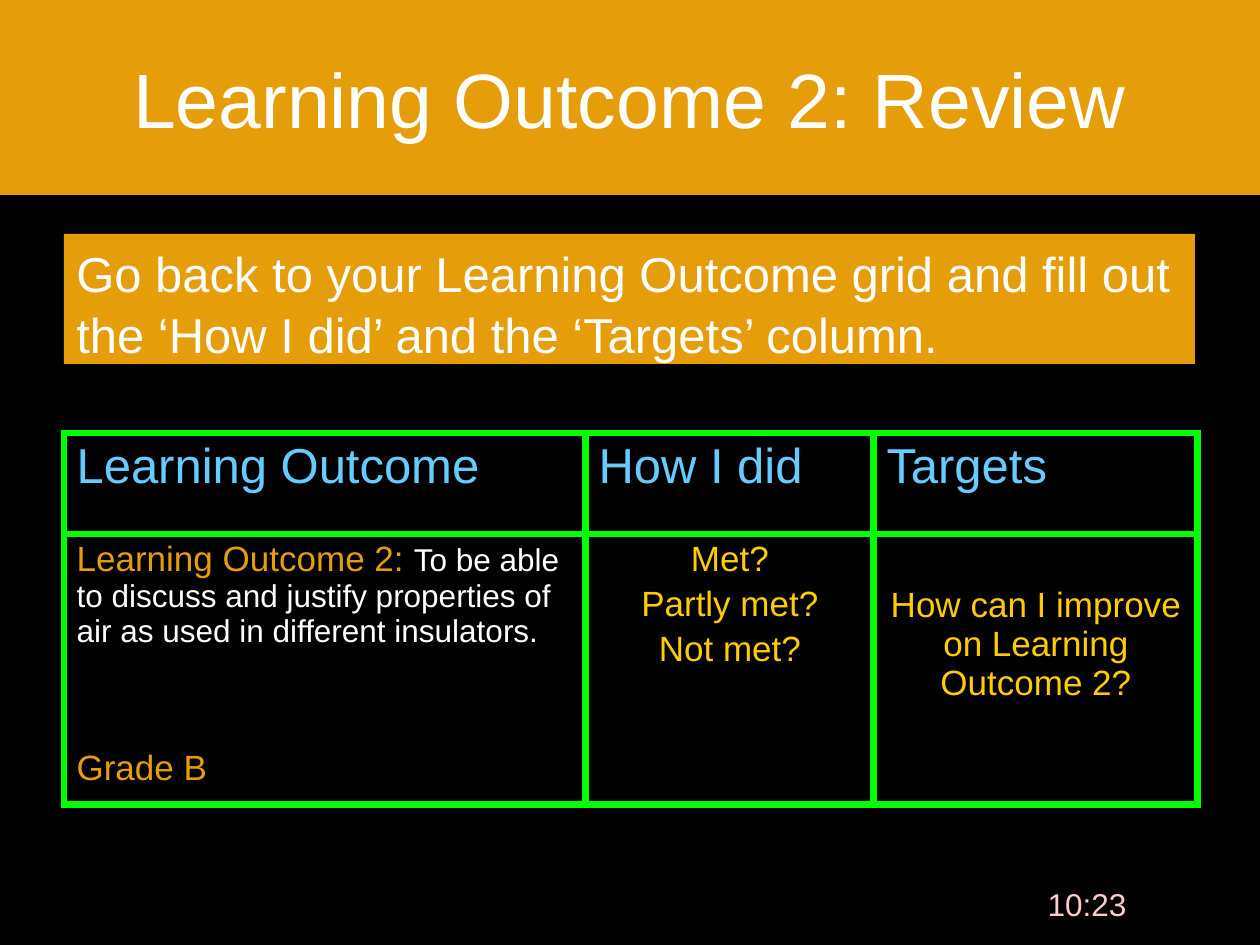
from dataclasses import dataclass

from lxml import etree
from pptx import Presentation
from pptx.dml.color import RGBColor
from pptx.enum.shapes import MSO_SHAPE
from pptx.enum.text import MSO_ANCHOR, PP_ALIGN
from pptx.oxml.ns import qn
from pptx.util import Pt

LEFT, MID = PP_ALIGN.LEFT, PP_ALIGN.CENTER
TOP, CENTRE = MSO_ANCHOR.TOP, MSO_ANCHOR.MIDDLE
RECT = MSO_SHAPE.RECTANGLE
SCALE = 914400 // 126


@dataclass(frozen=True)
class Theme:
    font: str = "Arial"
    back: str = "000000"
    band: str = "E69D0A"
    white: str = "FFFFFF"
    head: str = "66CCFF"
    ask: str = "FFCC00"
    clock: str = "FFCCCC"
    rule: str = "00FF00"
    title: int = 44
    large: int = 28
    mid: int = 20
    small: int = 18
    edge: float = 4.5
    gap: float = 3.5


THEME = Theme()


@dataclass(frozen=True)
class Run:
    text: str
    size: int
    color: str


@dataclass(frozen=True)
class Para:
    runs: tuple[Run, ...]
    align: PP_ALIGN = LEFT
    before: float = 0
    pitch: float = 1.0


@dataclass(frozen=True)
class Cell:
    paras: tuple[Para, ...]
    top: int = 6


def px(n: int) -> int:
    return n * SCALE


def apply(obj, values: dict) -> None:
    for name, value in values.items():
        setattr(obj, name, value)


def line(text: str, size: int, color: str, **form) -> Para:
    return Para((Run(text, size, color),), **form)


def paint(fill, color: str) -> None:
    fill.solid()
    fill.fore_color.rgb = RGBColor.from_string(color)


def write(frame, paras: tuple[Para, ...]) -> None:
    for i, item in enumerate(paras):
        para = frame.add_paragraph() if i else frame.paragraphs[0]
        apply(para, {"alignment": item.align, "space_before": Pt(item.before),
                     "line_spacing": item.pitch})
        for part in item.runs:
            run = para.add_run()
            run.text = part.text
            apply(run.font, {"name": THEME.font, "size": Pt(part.size),
                             "bold": False})
            run.font.color.rgb = RGBColor.from_string(part.color)


def place(shape, box: tuple[int, ...], anchor: MSO_ANCHOR, para: Para) -> None:
    """Set the box of a shape and write its one paragraph."""
    names = ("left", "top", "width", "height")
    apply(shape, dict(zip(names, map(px, box))))
    apply(shape.text_frame, {"word_wrap": True, "vertical_anchor": anchor})
    write(shape.text_frame, (para,))


def border(cell) -> None:
    props = cell._tc.get_or_add_tcPr()
    for i, side in enumerate(("lnL", "lnR", "lnT", "lnB")):
        ln = etree.Element(qn(f"a:{side}"), w=str(Pt(THEME.edge)))
        fill = etree.SubElement(ln, qn("a:solidFill"))
        etree.SubElement(fill, qn("a:srgbClr"), val=THEME.rule)
        props.insert(i, ln)


def grid(slide, spot: tuple[int, int], cols: tuple[int, ...],
         rows: tuple[int, ...], cells: tuple[tuple[Cell, ...], ...]) -> None:
    box = (*spot, sum(cols), sum(rows))
    table = slide.shapes.add_table(len(rows), len(cols), *map(px, box)).table
    apply(table, {"first_row": False, "horz_banding": False})
    for col, width in zip(table.columns, cols):
        col.width = px(width)
    for r, (row, height) in enumerate(zip(table.rows, rows)):
        row.height = px(height)
        for cell, data in zip(row.cells, cells[r]):
            cell.margin_top = px(data.top)
            paint(cell.fill, THEME.back)
            border(cell)
            write(cell.text_frame, data.paras)


def main() -> None:
    t = THEME
    deck = Presentation()
    apply(deck, {"slide_width": px(1260), "slide_height": px(945)})
    slide = deck.slides.add_slide(deck.slide_layouts[5])
    paint(slide.background.fill, t.back)

    title = slide.shapes.title
    paint(title.fill, t.band)
    place(title, (0, 0, 1260, 195), CENTRE,
          line("Learning Outcome 2: Review", t.title, t.white, align=MID))

    clock = slide.shapes.add_textbox(0, 0, 0, 0)
    place(clock, (988, 879, 198, 66), TOP,
          line("10:23", t.small, t.clock, align=MID))

    heads = ("Learning Outcome", "How I did", "Targets")
    marks = ("Met?", "Partly met?", "Not met?")
    goal = Para((
        Run("Learning Outcome 2: ", t.mid, t.band),
        Run("To be able to discuss and justify properties of air as used in "
            "different insulators.", t.small, t.white)))
    grade = line("Grade B", t.mid, t.band, before=56.5)
    plan = line("How can I improve on Learning Outcome 2?", t.mid, t.ask,
                align=MID)
    grid(slide, (64, 433), (522, 288, 324), (101, 260), (
        tuple(Cell((line(h, t.large, t.head),)) for h in heads),
        (Cell((goal, grade)),
         Cell(tuple(line(m, t.mid, t.ask, align=MID, before=t.gap if i else 0)
                    for i, m in enumerate(marks))),
         Cell((plan,), top=52))))

    task = slide.shapes.add_shape(RECT, 0, 0, 0, 0)
    task.shadow.inherit = False
    paint(task.fill, t.band)
    task.line.fill.background()
    place(task, (64, 234, 1131, 130), TOP,
          line("Go back to your Learning Outcome grid and fill out the "
               "‘How I did’ and the ‘Targets’ column.",
               t.large, t.white, pitch=1.05))

    deck.save("out.pptx")


if __name__ == "__main__":
    main()
